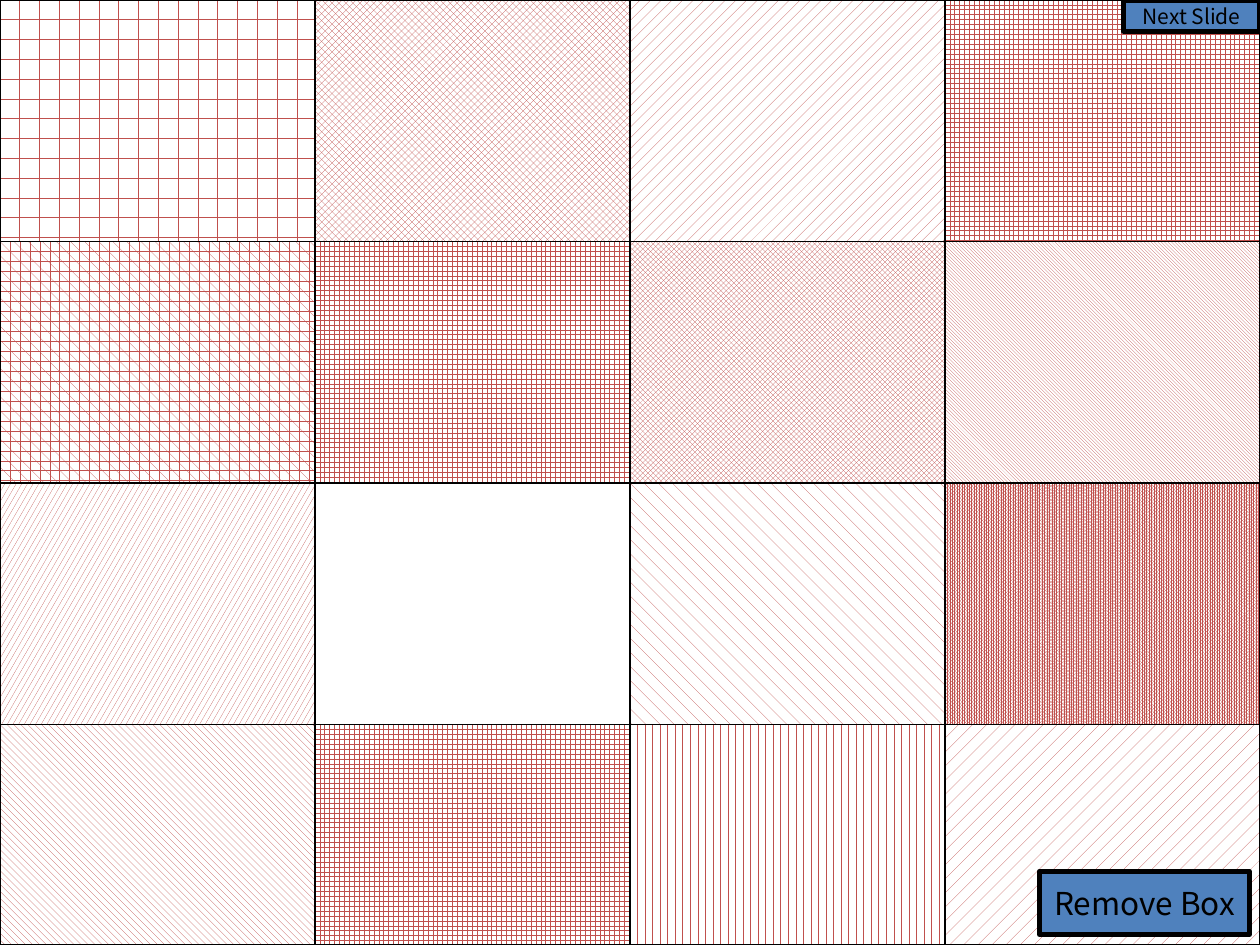
from pptx import Presentation
from pptx.dml.color import RGBColor
from pptx.enum.dml import MSO_PATTERN as PAT
from pptx.enum.shapes import MSO_SHAPE
from pptx.enum.text import MSO_ANCHOR, PP_ALIGN
from pptx.util import Pt

PX = 9525  # EMU per px, 96 px to the inch
SLIDE_W, SLIDE_H = 960, 720
COL_W, ROW_H = 240, 184
FONT = "Noto Sans CJK KR"
RED = RGBColor(0xC0, 0x50, 0x4D)
BLUE = RGBColor(0x4F, 0x81, 0xBD)
WHITE = RGBColor(0xFF, 0xFF, 0xFF)
BLACK = RGBColor(0, 0, 0)

# One pattern per tile; None leaves the background uncovered
TILES = [
    [PAT.DOTTED_GRID, PAT.OUTLINED_DIAMOND, PAT.PERCENT_20, PAT.LARGE_GRID],
    [PAT.PLAID, PAT.LARGE_GRID, PAT.TRELLIS, PAT.LIGHT_DOWNWARD_DIAGONAL],
    [PAT.LARGE_CONFETTI, None, PAT.SHINGLE, PAT.PERCENT_90],
    [PAT.WIDE_DOWNWARD_DIAGONAL, PAT.LARGE_GRID, PAT.DASHED_VERTICAL, PAT.PERCENT_10],
]
# Text, font size, (left, top, width, height)
BUTTONS = [
    ("Remove Box", 18, (792, 664, 160, 48)),
    ("Next Slide", 12, (856, 0, 104, 24)),
]


def add_box(s, box, line_width):
    sp = s.shapes.add_shape(MSO_SHAPE.RECTANGLE, *(v * PX for v in box))
    sp.shadow.inherit = False
    sp.line.color.rgb = BLACK
    sp.line.width = Pt(line_width)
    return sp


def add_tile(s, row, col, pattern):
    top = row * ROW_H
    height = min(ROW_H, SLIDE_H - top)
    fill = add_box(s, (col * COL_W, top, COL_W, height), 0.75).fill
    fill.patterned()
    fill.pattern = pattern
    fill.fore_color.rgb = RED
    fill.back_color.rgb = WHITE


def set_text(sp, text, size, color=BLACK, align=PP_ALIGN.CENTER):
    tf = sp.text_frame
    tf.word_wrap = False
    tf.vertical_anchor = MSO_ANCHOR.MIDDLE
    p = tf.paragraphs[0]
    p.alignment = align
    r = p.add_run()
    r.text = text
    r.font.name = FONT
    r.font.size = Pt(size)
    r.font.color.rgb = color


def main():
    prs = Presentation()
    prs.slide_width, prs.slide_height = SLIDE_W * PX, SLIDE_H * PX
    s = prs.slides.add_slide(prs.slide_layouts[6])
    for row, patterns in enumerate(TILES):
        for col, pattern in enumerate(patterns):
            if pattern is not None:
                add_tile(s, row, col, pattern)
    for text, size, box in BUTTONS:
        sp = add_box(s, box, 3)
        sp.fill.solid()
        sp.fill.fore_color.rgb = BLUE
        set_text(sp, text, size)
    prs.save("out.pptx")


if __name__ == "__main__":
    main()
